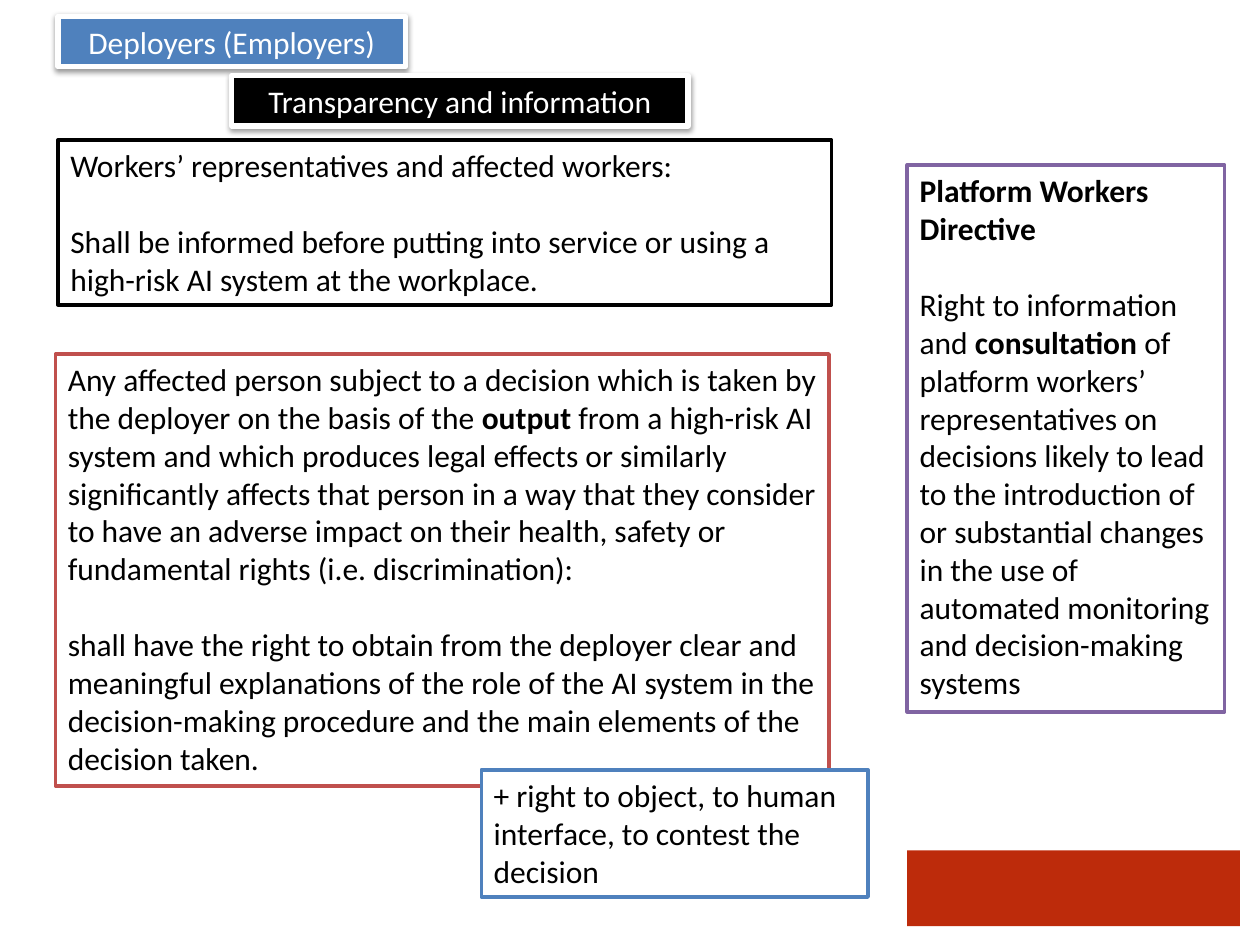
import pptx
import pptx.dml.color
import pptx.enum.shapes
import pptx.enum.text
import pptx.oxml
import pptx.oxml.ns
import pptx.util

FONT = "Calibri"
SIZE = 18
BLANK_LINE = 22  # points, one line of body text
BLACK, WHITE, BLUE = "000000", "FFFFFF", "4F81BD"
LEFT, RIGHT = 0.46, 7.2  # left edges of the two columns
MAIN_WIDTH = 6.14
LABEL_HEIGHT = 0.4

INFORMED = [
    [("Workers’ representatives and affected workers:", False)],
    [("Shall be informed before putting into service or using a high-risk "
      "AI system at the workplace.", False)],
]
EXPLANATION = [
    [("Any affected person subject to a decision which is taken by the "
      "deployer on the basis of the ", False),
     ("output ", True),
     ("from a high-risk AI system and which produces legal effects or "
      "similarly significantly affects that person in a way that they "
      "consider to have an adverse impact on their health, safety or "
      "fundamental rights (i.e. discrimination):", False)],
    [("shall have the right to obtain from the deployer clear and meaningful "
      "explanations of the role of the AI system in the decision-making "
      "procedure and the main elements of the decision taken.", False)],
]
DIRECTIVE = [
    [("Platform Workers Directive", True)],
    [("Right to information and ", False),
     ("consultation ", True),
     ("of platform workers’ representatives on decisions likely to lead to "
      "the introduction of or substantial changes in the use of automated "
      "monitoring and decision-making systems", False)],
]
OBJECTION = [
    [("+ right to object, to human interface, to contest the decision", False)],
]


def color(hex_string):
    return pptx.dml.color.RGBColor.from_string(hex_string)


def place(shape, *box):
    shape.left, shape.top, shape.width, shape.height = map(pptx.util.Inches, box)


def add_rectangle(slide, box):
    return slide.shapes.add_shape(
        pptx.enum.shapes.MSO_SHAPE.RECTANGLE, *map(pptx.util.Inches, box))


def style(shape, fill, line=None, line_width=2):
    shape.shadow.inherit = False
    shape.fill.solid()
    shape.fill.fore_color.rgb = color(fill)
    if line is None:
        shape.line.fill.background()
    else:
        shape.line.color.rgb = color(line)
        shape.line.width = pptx.util.Pt(line_width)


def write(shape, paragraphs, text_color, alignment):
    frame = shape.text_frame
    frame.word_wrap = True
    # Fixed box sizes: a title that may grow would cover the labels below
    frame.auto_size = pptx.enum.text.MSO_AUTO_SIZE.NONE
    frame.vertical_anchor = pptx.enum.text.MSO_ANCHOR.TOP
    for index, runs in enumerate(paragraphs):
        paragraph = frame.add_paragraph() if index else frame.paragraphs[0]
        paragraph.alignment = alignment
        if index:
            paragraph.space_before = pptx.util.Pt(BLANK_LINE)
        for text, bold in runs:
            run = paragraph.add_run()
            run.text = text
            run.font.name = FONT
            run.font.size = pptx.util.Pt(SIZE)
            run.font.bold = bold
            run.font.color.rgb = color(text_color)


def add_soft_shadow(shape):
    effects = shape._element.spPr.find(pptx.oxml.ns.qn("a:effectLst"))
    effects.append(pptx.oxml.parse_xml(
        f'<a:outerShdw {pptx.oxml.ns.nsdecls("a")} blurRad="40000" '
        'dist="20000" dir="5400000" rotWithShape="0">'
        f'<a:srgbClr val="{BLACK}"><a:alpha val="38000"/></a:srgbClr>'
        '</a:outerShdw>'))


def format_label(shape, text, fill):
    style(shape, fill, WHITE, 3)
    add_soft_shadow(shape)
    write(shape, [[(text, False)]], WHITE, pptx.enum.text.PP_ALIGN.CENTER)


def add_text_panel(slide, box, outline, paragraphs):
    panel = add_rectangle(slide, box)
    style(panel, WHITE, outline)
    write(panel, paragraphs, BLACK, pptx.enum.text.PP_ALIGN.LEFT)


def main():
    deck = pptx.Presentation()
    deck.slide_width = pptx.util.Inches(10)
    deck.slide_height = pptx.util.Inches(7.5)
    slide = deck.slides.add_slide(deck.slide_layouts[5])

    # Red block in the corner
    style(add_rectangle(slide, (RIGHT, 6.75, 2.64, 0.6)), "BD2B0B")

    # Title and topic labels
    title = slide.shapes.title
    place(title, LEFT, 0.13, 2.76, LABEL_HEIGHT)
    format_label(title, "Deployers (Employers)", BLUE)
    topic = add_rectangle(slide, (1.84, 0.6, 3.62, LABEL_HEIGHT))
    format_label(topic, "Transparency and information", BLACK)

    # Rights of workers, then the related directive and the added rights
    add_text_panel(slide, (LEFT, 1.11, MAIN_WIDTH, 1.31), BLACK, INFORMED)
    add_text_panel(slide, (0.44, 2.81, MAIN_WIDTH, 3.43), "C0504D", EXPLANATION)
    add_text_panel(slide, (RIGHT, 1.31, 2.52, 4.34), "8064A2", DIRECTIVE)
    add_text_panel(slide, (3.82, 6.11, 3.07, 1.01), BLUE, OBJECTION)

    deck.save("out.pptx")


if __name__ == "__main__":
    main()
